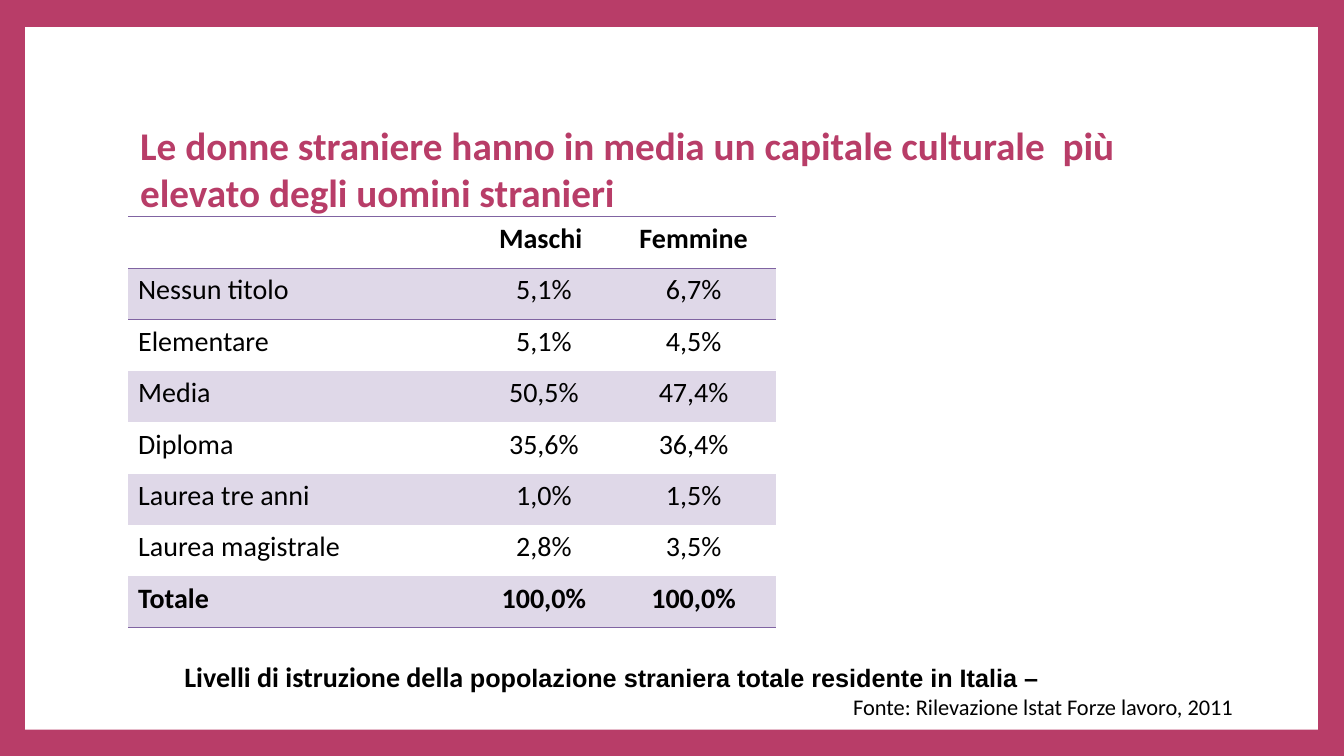
from lxml import etree
from pptx import Presentation
from pptx import util as u
from pptx.dml.color import RGBColor
from pptx.enum import shapes, text
from pptx.oxml import ns

MAGENTA = RGBColor(0xB8, 0x3D, 0x68)
PURPLE = RGBColor(0x80, 0x64, 0xA2)
LILAC = RGBColor(0xDF, 0xD8, 0xE8)
WHITE = RGBColor(0xFF, 0xFF, 0xFF)
BLACK = RGBColor(0, 0, 0)

TITLE = ("Le donne straniere hanno in media un capitale culturale  più "
         "elevato degli uomini stranieri")
ROWS = [
    ("", "Maschi ", "Femmine"),
    ("Nessun titolo", "5,1%", "6,7%"),
    ("Elementare", "5,1%", "4,5%"),
    ("Media", "50,5%", "47,4%"),
    ("Diploma", "35,6%", "36,4%"),
    ("Laurea tre anni", "1,0%", "1,5%"),
    ("Laurea magistrale", "2,8%", "3,5%"),
    ("Totale", "100,0%", "100,0%"),
]
COLUMN_WIDTHS = (3.46, 1.33, 1.64)
ROW_HEIGHT = 0.51
NO_STYLE = "{2D5ABB26-0587-4C30-8999-92F81FD0307C}"
CAPTION_START = "Livelli di istruzione della "
CAPTION_END = "popolazione straniera totale residente in Italia –"
SOURCE = "Fonte: Rilevazione lstat Forze lavoro, 2011 "


def add_text(paragraph, content, size=20, bold=False, color=BLACK,
             font="Calibri", align=text.PP_ALIGN.LEFT):
    paragraph.alignment = align
    run = paragraph.add_run()
    run.text = content
    run.font.name = font
    run.font.size = u.Pt(size)
    run.font.bold = bold
    run.font.color.rgb = color


def add_borders(cell, sides):
    """Draw thin purple lines on the given sides, "T" before "B"."""
    properties = cell._tc.get_or_add_tcPr()
    for position, side in enumerate(sides):
        line = etree.Element(ns.qn(f"a:ln{side}"), w=str(u.Pt(1)))
        fill = etree.SubElement(line, ns.qn("a:solidFill"))
        etree.SubElement(fill, ns.qn("a:srgbClr"), val=str(PURPLE))
        properties.insert(position, line)


def add_title(slide):
    title = slide.shapes.title
    title.left, title.top = u.Inches(1.29), u.Inches(0.18)
    title.width, title.height = u.Inches(10.36), u.Inches(2.69)
    frame = title.text_frame
    frame.auto_size = text.MSO_AUTO_SIZE.NONE
    frame.word_wrap = True
    frame.vertical_anchor = text.MSO_ANCHOR.MIDDLE
    frame.margin_top = u.Inches(0.34)
    add_text(frame.paragraphs[0], TITLE, size=28, bold=True, color=MAGENTA)
    return title


def add_panel(slide, title):
    panel = slide.shapes.add_shape(
        shapes.MSO_SHAPE.RECTANGLE, u.Inches(0.25), u.Inches(0.27),
        u.Inches(12.82), u.Inches(6.97))
    panel.fill.solid()
    panel.fill.fore_color.rgb = WHITE
    panel.line.fill.background()
    panel.shadow.inherit = False
    title.element.addprevious(panel.element)


def add_education_table(slide):
    frame = slide.shapes.add_table(
        len(ROWS), len(COLUMN_WIDTHS), u.Inches(1.27), u.Inches(2.15),
        u.Inches(sum(COLUMN_WIDTHS)), u.Inches(ROW_HEIGHT * len(ROWS)))
    table = frame.table
    table.first_row = table.horz_banding = False
    table._tbl.tblPr.find(ns.qn("a:tableStyleId")).text = NO_STYLE
    for column, width in zip(table.columns, COLUMN_WIDTHS):
        column.width = u.Inches(width)

    last = len(ROWS) - 1
    for row, values in enumerate(ROWS):
        table.rows[row].height = u.Inches(ROW_HEIGHT)
        for column, value in enumerate(values):
            cell = table.cell(row, column)
            cell.margin_top = cell.margin_bottom = 0
            if row % 2:
                cell.fill.solid()
                cell.fill.fore_color.rgb = LILAC
            else:
                cell.fill.background()
            add_borders(cell, {0: "TB", 1: "T", last: "B"}.get(row, ""))
            if value:
                paragraph = cell.text_frame.paragraphs[0]
                paragraph.line_spacing = 1.15
                add_text(paragraph, value, bold=row in (0, last),
                         align=text.PP_ALIGN.CENTER if column
                         else text.PP_ALIGN.LEFT)


def add_caption(slide):
    box = slide.shapes.add_textbox(
        u.Inches(1.73), u.Inches(6.49), u.Inches(10.65), u.Inches(0.71))
    frame = box.text_frame
    frame.word_wrap = True
    caption = frame.paragraphs[0]
    add_text(caption, CAPTION_START, bold=True)
    add_text(caption, CAPTION_END, size=18, bold=True, font="Arial")
    add_text(frame.add_paragraph(), SOURCE, size=16,
             align=text.PP_ALIGN.RIGHT)


def main():
    presentation = Presentation()
    presentation.slide_width = u.Inches(13.33)
    presentation.slide_height = u.Inches(7.5)
    slide = presentation.slides.add_slide(presentation.slide_layouts[5])
    slide.background.fill.solid()
    slide.background.fill.fore_color.rgb = MAGENTA
    title = add_title(slide)
    add_panel(slide, title)
    add_education_table(slide)
    add_caption(slide)
    presentation.save("out.pptx")


if __name__ == "__main__":
    main()
